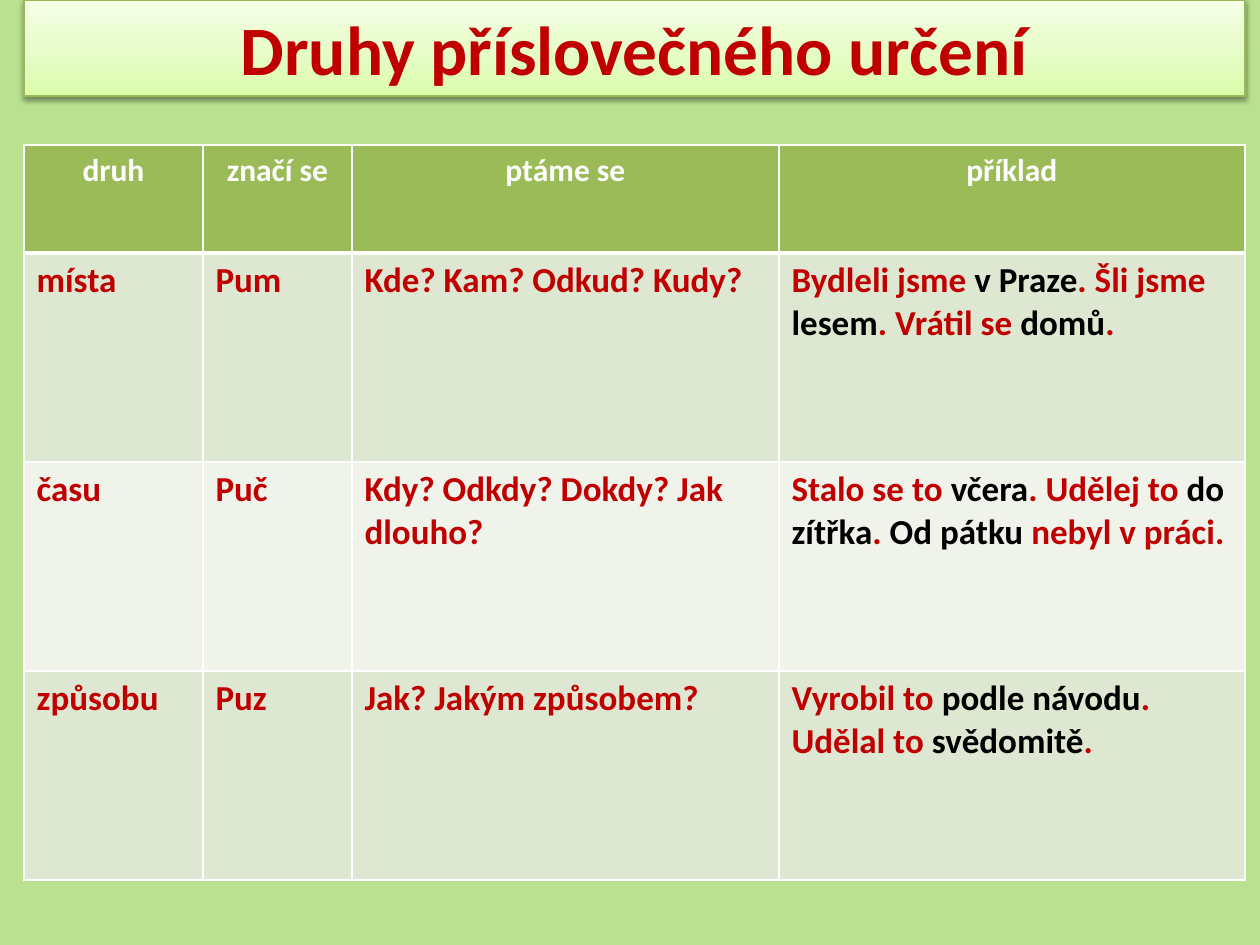
from copy import deepcopy
from itertools import cycle

from lxml import etree
from pptx import Presentation
from pptx import util as u
from pptx.dml.color import RGBColor
from pptx.enum import shapes, text
from pptx.oxml import ns

RED = RGBColor(0xC0, 0x00, 0x00)
BLACK = RGBColor(0x00, 0x00, 0x00)
WHITE = RGBColor(0xFF, 0xFF, 0xFF)
BACKGROUND = RGBColor(0xB9, 0xE1, 0x8F)
HEADER_GREEN = RGBColor(0x9B, 0xBB, 0x59)
BAND_DARK = RGBColor(0xDE, 0xE7, 0xD1)
BAND_LIGHT = RGBColor(0xEF, 0xF3, 0xEA)
TITLE_LINE = RGBColor(0x98, 0xB9, 0x55)
TITLE_STOPS = [
    (0, RGBColor(0xDA, 0xFD, 0xA7)),
    (0.35, RGBColor(0xE4, 0xFC, 0xC2)),
    (1, RGBColor(0xF5, 0xFF, 0xE7)),
]

FONT = "Calibri"
TITLE = "Druhy příslovečného určení"
HEADER = ["druh", "značí se", "ptáme se", "příklad"]
ROWS = [
    ("místa", "Pum", "Kde? Kam? Odkud? Kudy?",
     ["Bydleli jsme ", "v Praze", ". Šli jsme ", "lesem", ". Vrátil se ", "domů", "."]),
    ("času", "Puč", "Kdy? Odkdy? Dokdy? Jak dlouho?",
     ["Stalo se to ", "včera", ". Udělej to ", "do zítřka", ". ", "Od pátku ", "nebyl v práci."]),
    ("způsobu", "Puz", "Jak? Jakým způsobem?",
     ["Vyrobil to ", "podle návodu", ". Udělal to ", "svědomitě", "."]),
]

PAGE_WIDTH, PAGE_HEIGHT = 1260, 945
LEFT, TITLE_HEIGHT, TABLE_TOP = 24, 96, 145
COLUMN_WIDTHS = [179, 149, 427, 466]
ROW_HEIGHTS = [108, 209, 209, 209]
CONTENT_WIDTH = sum(COLUMN_WIDTHS)


def px(length):
    return u.Emu(round(length * u.Inches(1) / 126))


def child(parent, tag, **attributes):
    return etree.SubElement(parent, ns.qn(tag), {k: str(v) for k, v in attributes.items()})


def add_span(para, words, size, color):
    span = para.add_run()
    span.text = words
    span.font.name = FONT
    span.font.size = u.Pt(size)
    span.font.bold = True
    span.font.color.rgb = color


def add_title(page):
    box = page.shapes.add_shape(
        shapes.MSO_SHAPE.RECTANGLE, px(LEFT), 0, px(CONTENT_WIDTH), px(TITLE_HEIGHT))
    box.fill.gradient()
    box.fill.gradient_angle = 90
    stop_list = box._element.spPr.find(".//" + ns.qn("a:gsLst"))
    stop_list.append(deepcopy(stop_list[0]))
    for stop, (position, color) in zip(box.fill.gradient_stops, TITLE_STOPS):
        stop.position = position
        stop.color.rgb = color
    box.line.color.rgb = TITLE_LINE
    box.line.width = u.Pt(0.75)

    box.shadow.inherit = False
    effects = box._element.spPr.find(ns.qn("a:effectLst"))
    shadow = child(effects, "a:outerShdw", blurRad=u.Pt(3.1), dist=u.Pt(1.6),
                   dir=90 * 60000, rotWithShape=0)
    child(child(shadow, "a:srgbClr", val=BLACK), "a:alpha", val=38000)

    frame = box.text_frame
    frame.word_wrap = True
    frame.vertical_anchor = text.MSO_ANCHOR.MIDDLE
    para = frame.paragraphs[0]
    para.alignment = text.PP_ALIGN.CENTER
    add_span(para, TITLE, 39.6, RED)


def style_cell(cell, color, bottom_width):
    properties = cell._tc.get_or_add_tcPr()
    for side, width in [("L", 1), ("R", 1), ("T", 1), ("B", bottom_width)]:
        border = child(properties, f"a:ln{side}", w=u.Pt(width))
        child(child(border, "a:solidFill"), "a:srgbClr", val=WHITE)
    cell.fill.solid()
    cell.fill.fore_color.rgb = color


def add_table(page):
    table = page.shapes.add_table(
        len(ROW_HEIGHTS), len(COLUMN_WIDTHS), px(LEFT), px(TABLE_TOP),
        px(CONTENT_WIDTH), px(sum(ROW_HEIGHTS))).table
    for column, width in zip(table.columns, COLUMN_WIDTHS):
        column.width = px(width)
    for row, height in zip(table.rows, ROW_HEIGHTS):
        row.height = px(height)

    for cell, label in zip(table.rows[0].cells, HEADER):
        style_cell(cell, HEADER_GREEN, 3)
        para = cell.text_frame.paragraphs[0]
        para.alignment = text.PP_ALIGN.CENTER
        add_span(para, label, 18, WHITE)

    for index, (*labels, example) in enumerate(ROWS, start=1):
        band = BAND_DARK if index % 2 else BAND_LIGHT
        contents = [[label] for label in labels] + [example]
        for cell, spans in zip(table.rows[index].cells, contents):
            style_cell(cell, band, 1)
            para = cell.text_frame.paragraphs[0]
            for words, color in zip(spans, cycle([RED, BLACK])):
                add_span(para, words, 20, color)
    for cell in table.rows[1].cells:
        cell._tc.tcPr.find(ns.qn("a:lnT")).set("w", str(u.Pt(3)))


def main():
    deck = Presentation()
    deck.slide_width, deck.slide_height = px(PAGE_WIDTH), px(PAGE_HEIGHT)
    page = deck.slides.add_slide(deck.slide_layouts[6])
    page.background.fill.solid()
    page.background.fill.fore_color.rgb = BACKGROUND
    add_title(page)
    add_table(page)
    deck.save("out.pptx")


if __name__ == "__main__":
    main()
